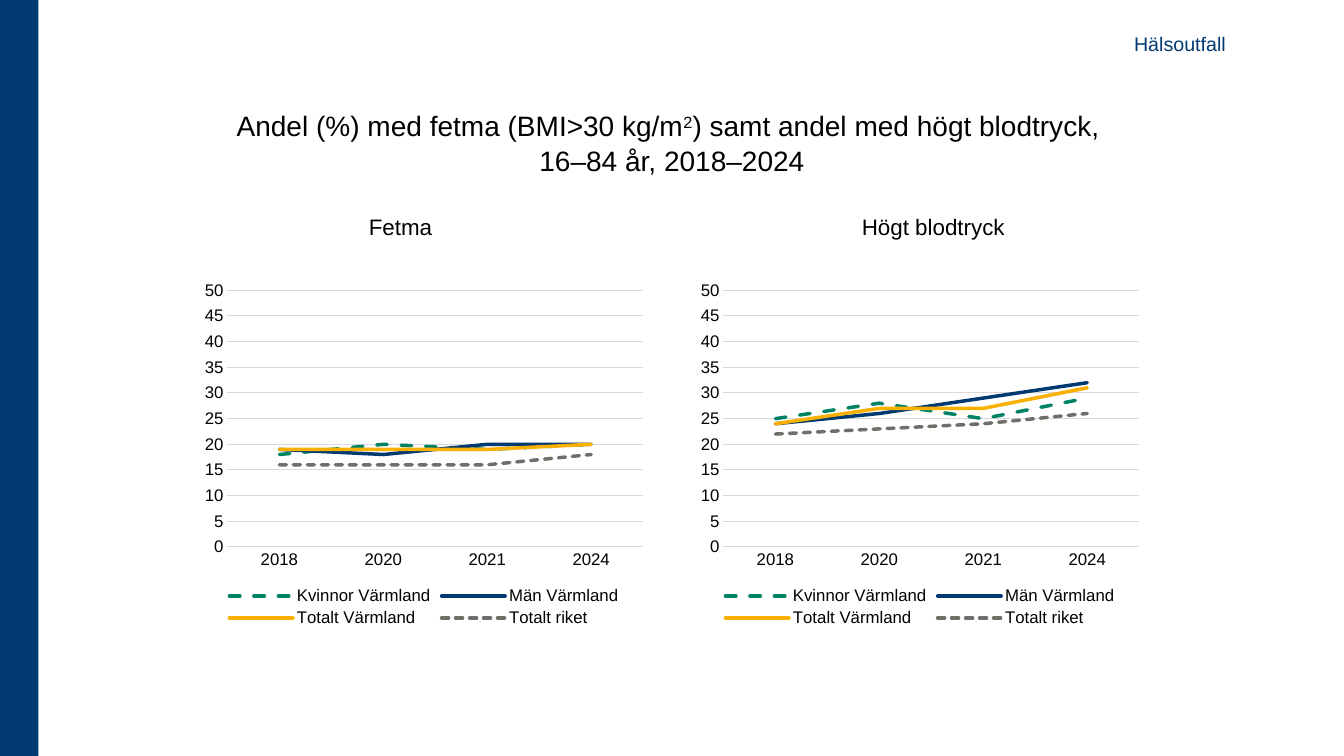
from pptx import Presentation
from pptx.chart.data import CategoryChartData
from pptx.dml.color import RGBColor
from pptx.enum.chart import XL_CHART_TYPE, XL_LEGEND_POSITION, XL_TICK_MARK
from pptx.enum.dml import MSO_LINE
from pptx.enum.shapes import MSO_SHAPE
from pptx.enum.text import MSO_ANCHOR, PP_ALIGN
from pptx.util import Inches, Pt

NAVY = RGBColor(0x00, 0x3A, 0x70)
GREEN = RGBColor(0x00, 0x82, 0x64)
YELLOW = RGBColor(0xF9, 0xB0, 0x00)
GRAY = RGBColor(0x6F, 0x6E, 0x68)
GRID = RGBColor(0xD9, 0xD9, 0xD9)
BLACK = RGBColor(0x00, 0x00, 0x00)

LINE_CHART = XL_CHART_TYPE.LINE
LEGEND_BOTTOM = XL_LEGEND_POSITION.BOTTOM
NO_TICK = XL_TICK_MARK.NONE
SOLID, DASH, SHORT_DASH = MSO_LINE.SOLID, MSO_LINE.DASH, MSO_LINE.SQUARE_DOT
RECTANGLE = MSO_SHAPE.RECTANGLE
TOP, BOTTOM = MSO_ANCHOR.TOP, MSO_ANCHOR.BOTTOM
LEFT, CENTER = PP_ALIGN.LEFT, PP_ALIGN.CENTER

FONT = "Arial"
YEARS = ["2018", "2020", "2021", "2024"]
GROUPS = [
    ("Kvinnor Värmland", GREEN, DASH),
    ("Män Värmland", NAVY, SOLID),
    ("Totalt Värmland", YELLOW, SOLID),
    ("Totalt riket", GRAY, SHORT_DASH),
]
OBESITY = [[18, 20, 19, 20], [19, 18, 20, 20], [19, 19, 19, 20], [16, 16, 16, 18]]
BLOOD_PRESSURE = [[25, 28, 25, 29], [24, 26, 29, 32], [24, 27, 27, 31], [22, 23, 24, 26]]


def set_font(font, size, color=BLACK):
    font.name = FONT
    font.size = Pt(size)
    font.bold = False
    font.color.rgb = color


def add_text(page, area, text, size=16, color=BLACK, align=LEFT, anchor=TOP,
             spacing=1.0, superscript=None):
    box = page.shapes.add_textbox(*map(Inches, area))
    frame = box.text_frame
    frame.word_wrap = True
    frame.vertical_anchor = anchor
    para = frame.paragraphs[0]
    para.alignment = align
    para.line_spacing = spacing
    for number, line in enumerate(text.split("\n")):
        if number:
            para.add_line_break()
        pieces = line.partition(superscript) if superscript else [line]
        for piece in filter(None, pieces):
            span = para.add_run()
            span.text = piece.strip("^")
            set_font(span.font, size, color)
            if piece == superscript:
                span.font._element.set("baseline", "30000")


def add_side_band(page, area):
    band = page.shapes.add_shape(RECTANGLE, *map(Inches, area))
    band.shadow.inherit = False
    band.fill.solid()
    band.fill.fore_color.rgb = NAVY
    band.line.fill.background()


def add_header(page, left, top, width):
    add_text(page, (left + 9.21, top - 0.79, 1.5, 0.34), "Hälsoutfall", size=14, color=NAVY)
    add_text(page, (left, top, width, 0.75),
             "Andel (%) med fetma (BMI>30 kg/m^2^) samt andel med högt blodtryck, \n"
             "16–84 år, 2018–2024",
             size=20, align=CENTER, anchor=BOTTOM, spacing=1.05, superscript="^2^")


def add_trend_panel(page, left, top, heading, heading_offset, values):
    add_text(page, (left + heading_offset, top, 1.65, 0.37), heading)
    data = CategoryChartData()
    data.categories = YEARS
    for (name, _, _), shares in zip(GROUPS, values):
        data.add_series(name, shares)
    area = (left, top + 0.65, 4.53, 3.54)
    chart = page.shapes.add_chart(LINE_CHART, *map(Inches, area), data).chart
    set_font(chart.font, 10)
    chart.has_title = False
    chart.has_legend = True
    chart.legend.position = LEGEND_BOTTOM
    chart.legend.include_in_layout = False
    set_font(chart.legend.font, 12)
    chart.plots[0].vary_by_categories = False

    for axis in (chart.category_axis, chart.value_axis):
        axis.major_tick_mark = NO_TICK
        axis.minor_tick_mark = NO_TICK
        set_font(axis.tick_labels.font, 12)
    value_axis = chart.value_axis
    value_axis.minimum_scale = 0
    value_axis.maximum_scale = 50
    value_axis.major_unit = 5
    value_axis.has_major_gridlines = True
    value_axis.format.line.fill.background()
    for line in (chart.category_axis.format.line, value_axis.major_gridlines.format.line):
        line.color.rgb = GRID
        line.width = Pt(0.75)

    for series, (_, color, dash) in zip(chart.plots[0].series, GROUPS):
        series.smooth = False
        line = series.format.line
        line.color.rgb = color
        line.width = Pt(2.5)
        line.dash_style = dash
        line._ln.set("cap", "rnd")


def main():
    deck = Presentation()
    deck.slide_width = Inches(13.33)
    deck.slide_height = Inches(7.5)
    page = deck.slides.add_slide(deck.slide_layouts[6])
    add_side_band(page, (0, 0, 0.38, 7.5))
    add_header(page, 1.94, 1.06, 9.45)
    add_trend_panel(page, 1.94, 2.07, "Fetma", 1.62, OBESITY)
    add_trend_panel(page, 6.86, 2.07, "Högt blodtryck", 1.59, BLOOD_PRESSURE)
    deck.save("out.pptx")


if __name__ == "__main__":
    main()
